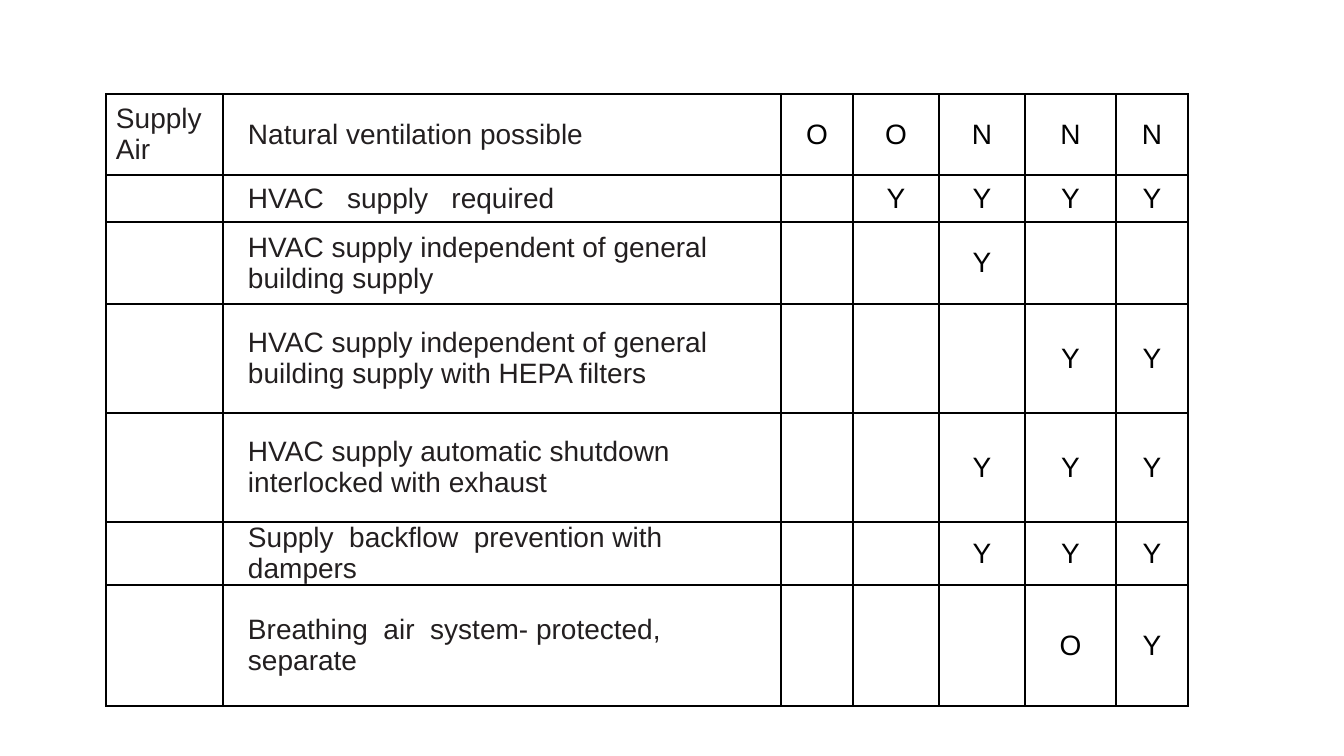
"""Builds a slide with a table of supply air needs."""
from lxml import etree
from pptx import Presentation
from pptx.dml.color import RGBColor
from pptx.enum.text import MSO_ANCHOR, PP_ALIGN
from pptx.oxml.ns import qn
from pptx.util import Pt

MIDDLE = MSO_ANCHOR.MIDDLE
CENTER = PP_ALIGN.CENTER
LEFT = PP_ALIGN.LEFT

ROWS = [
    ("Supply Air", "Natural ventilation possible", "O", "O", "N", "N", "N"),
    ("", "HVAC   supply   required", "", "Y", "Y", "Y", "Y"),
    ("", "HVAC supply independent of general building supply",
     "", "", "Y", "", ""),
    ("", "HVAC supply independent of general building supply with HEPA filters",
     "", "", "", "Y", "Y"),
    ("", "HVAC supply automatic shutdown interlocked with exhaust",
     "", "", "Y", "Y", "Y"),
    ("", "Supply  backflow  prevention with dampers", "", "", "Y", "Y", "Y"),
    ("", "Breathing  air  system- protected, separate", "", "", "", "O", "Y"),
]
WIDTHS = [117, 558, 72, 86, 86, 91, 72]
HEIGHTS = [81, 47, 82, 109, 109, 63, 121]
INDENTS = [3, 18]
RIGHTS = [7, 24]
COLORS = {"label": "231F20", "mark": "000000", "line": "000000"}


def px(n):
    return round(n * 914400 / 100.8)


def border(cell):
    props = cell._tc.get_or_add_tcPr()
    for i, side in enumerate(("lnL", "lnR", "lnT", "lnB")):
        line = etree.Element(qn("a:" + side), w=str(Pt(1)))
        fill = etree.SubElement(line, qn("a:solidFill"))
        etree.SubElement(fill, qn("a:srgbClr"), val=COLORS["line"])
        props.insert(i, line)


def write(cell, text, col):
    label = col < len(INDENTS)
    cell.vertical_anchor = MIDDLE
    cell.margin_left = px(7)
    cell.margin_right = px(RIGHTS[col] if label else 7)
    cell.margin_top = cell.margin_bottom = 0
    cell.fill.background()
    border(cell)
    cell.text_frame.text = text
    para = cell.text_frame.paragraphs[0]
    para.alignment = LEFT if label else CENTER
    if label:
        para.space_before = Pt(0.5)
        para._p.get_or_add_pPr().set("marL", str(px(INDENTS[col])))
    else:
        para.space_after = Pt(10)
    for run in para.runs:
        run.font.name = "Arial"
        run.font.size = Pt(20)
        run.font.color.rgb = RGBColor.from_string(
            COLORS["label" if label else "mark"])


def main():
    deck = Presentation()
    deck.slide_width, deck.slide_height = px(1344), px(756)
    slide = deck.slides.add_slide(deck.slide_layouts[6])
    table = slide.shapes.add_table(
        len(ROWS), len(WIDTHS), px(106), px(94),
        px(sum(WIDTHS)), px(sum(HEIGHTS))).table
    table.first_row = table.horz_banding = False
    for col, width in zip(table.columns, WIDTHS):
        col.width = px(width)
    for row, height in zip(table.rows, HEIGHTS):
        row.height = px(height)
    for r, texts in enumerate(ROWS):
        for c, text in enumerate(texts):
            write(table.cell(r, c), text, c)
    deck.save("out.pptx")


if __name__ == "__main__":
    main()
